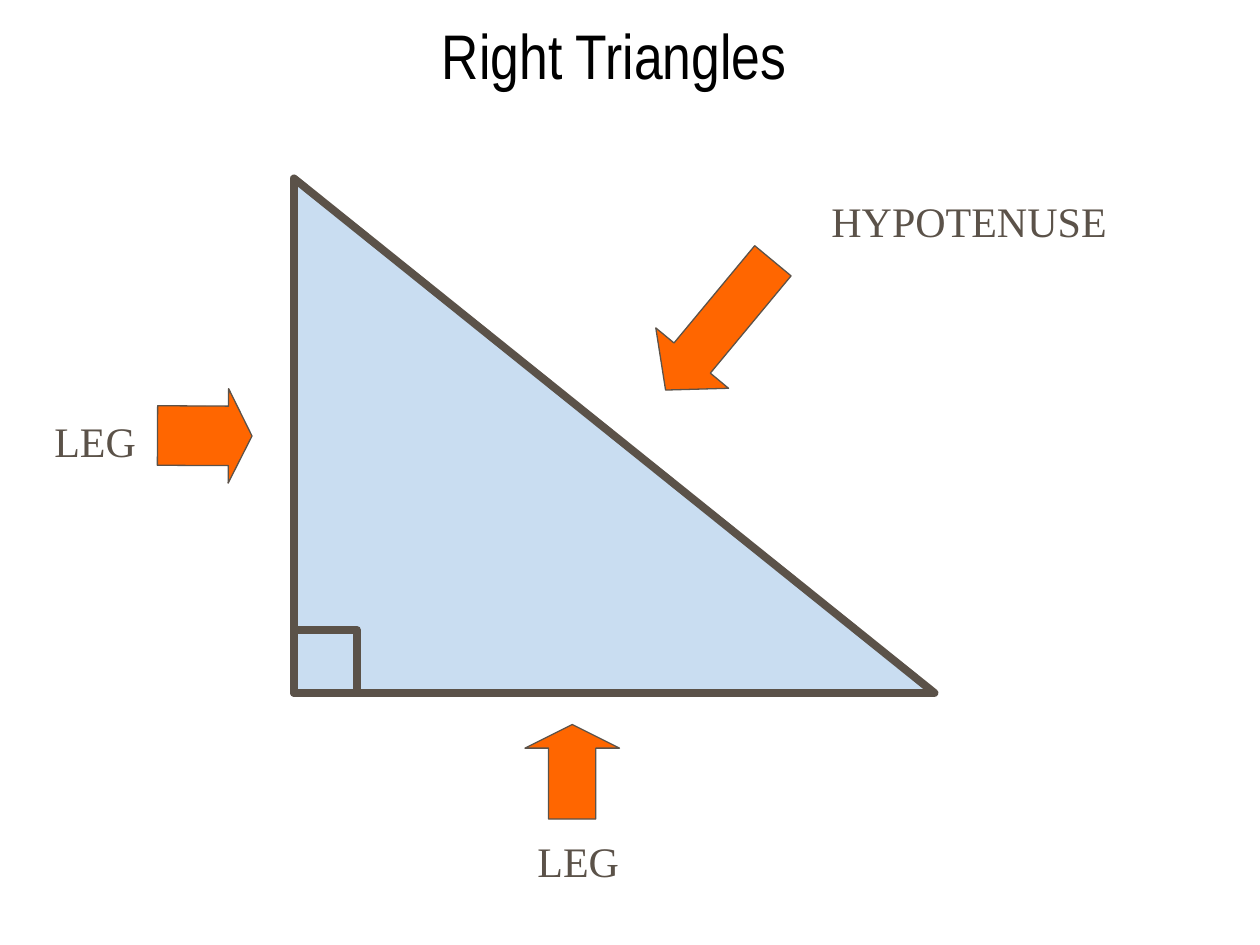
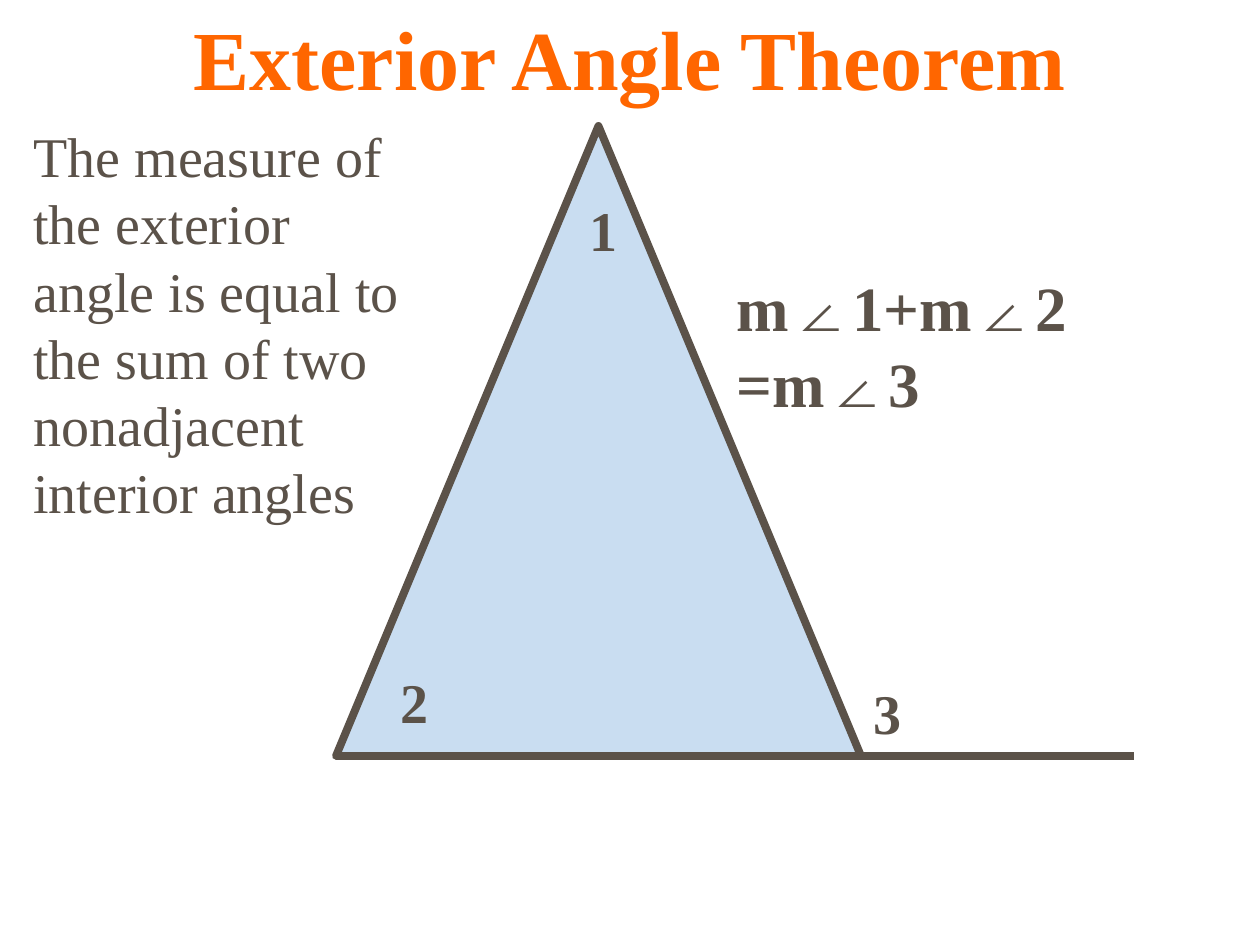
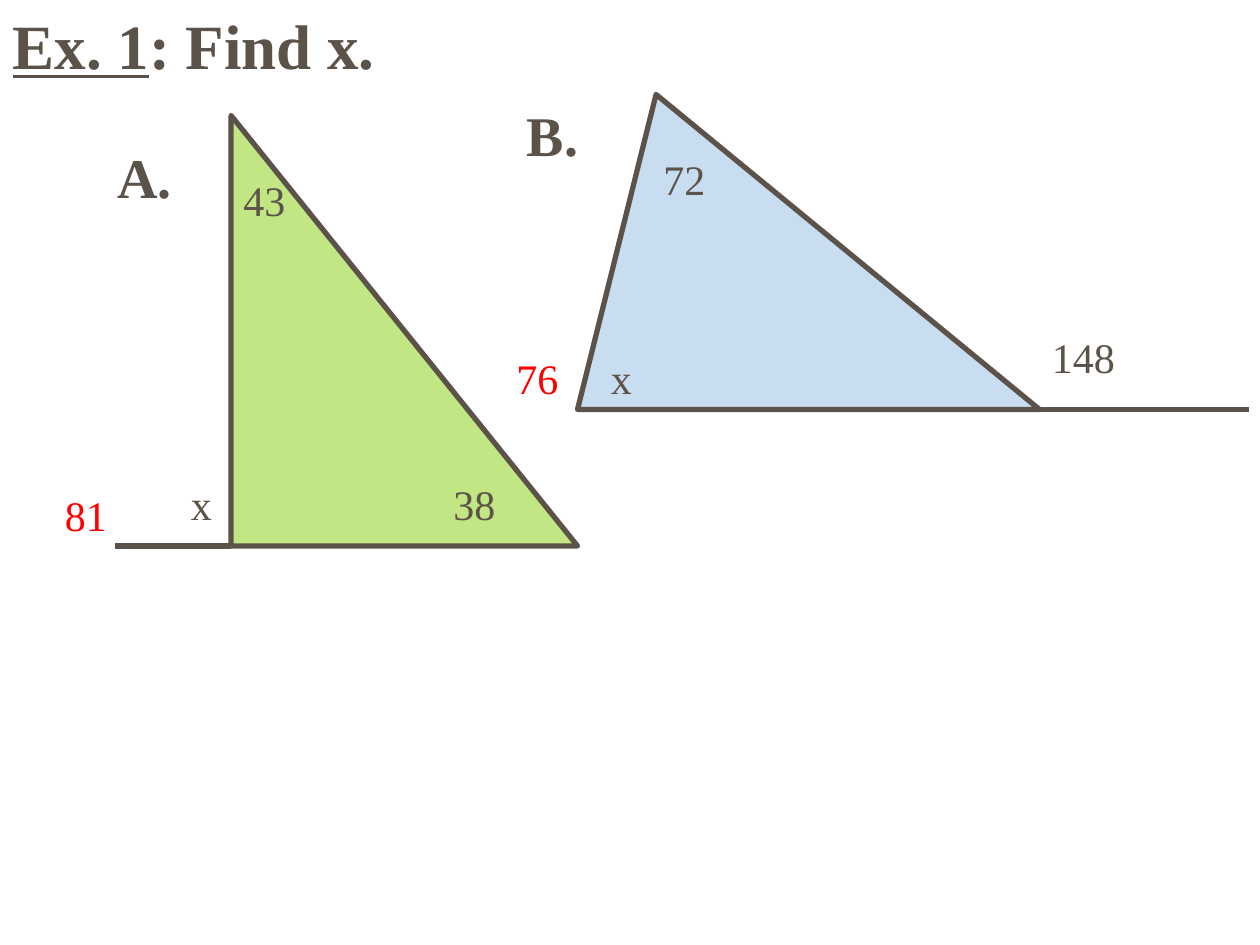
from pptx import Presentation
from pptx import util as u
from pptx.dml.color import RGBColor
from pptx.enum import shapes, text
from pptx.oxml.ns import qn
from lxml import etree

PX = 9525  # EMU in one px, 96 px to the inch
BROWN, ORANGE, RED, BLACK = "5B5249", "FF6600", "FF0000", "000000"
BLUE, GREEN = "C9DDF1", "C3E684"
SERIF, NARROW = "Times New Roman", "Arial Narrow"
KIND = shapes.MSO_SHAPE
LABEL = dict(size=24, bold=False)
MARK = dict(size=32, bold=True)
HEADING = dict(size=36, bold=True)


def px(*lengths):
    return [u.Emu(length * PX) for length in lengths]


def paint(fmt, colour):
    """Give a fill or font colour from a hex string."""
    fmt.rgb = RGBColor.from_string(colour)


def outline(line, width):
    paint(line.color, BROWN)
    line.width = u.Pt(width)


def write(frame, runs, size, colour=BROWN, font=SERIF, align="LEFT", wrap=True, **style):
    """Fill a text frame with one paragraph; each run is (words, extra style)."""
    frame.word_wrap = wrap
    frame.auto_size = text.MSO_AUTO_SIZE.NONE
    frame.vertical_anchor = text.MSO_ANCHOR.TOP
    paragraph = frame.paragraphs[0]
    paragraph.alignment = text.PP_ALIGN[align]
    for words, extra in runs:
        run = paragraph.add_run()
        run.text = words
        look = dict(name=font, size=u.Pt(size), **style) | extra
        for key, value in look.items():
            setattr(run.font, key, value)
        paint(run.font.color, colour)


def title_slide(deck, box, runs, **style):
    slide = deck.slides.add_slide(deck.slide_layouts[5])
    title = slide.shapes.title
    title.left, title.top, title.width, title.height = px(*box)
    write(title.text_frame, runs, **style)
    return slide


def label(slide, box, words, **style):
    frame = slide.shapes.add_textbox(*px(*box)).text_frame
    write(frame, [(words, {})], **style)


def figure(slide, kind, box, fill, width, adjust=(), turn=0):
    outlined = slide.shapes.add_shape(kind, *px(*box))
    outlined.shadow.inherit = False
    outlined.fill.solid()
    paint(outlined.fill.fore_color, fill)
    outline(outlined.line, width)
    outlined.rotation = turn
    for index, value in enumerate(adjust):
        outlined.adjustments[index] = value


def extension(slide, start, length, width):
    """Draw the side of a triangle onwards from one corner."""
    x, y = start
    side = slide.shapes.add_connector(shapes.MSO_CONNECTOR.STRAIGHT, *px(x, y, x + length, y))
    outline(side.line, width)
    etree.SubElement(side.line._get_or_add_ln().getparent(), qn("a:effectLst"))


def right_triangles(deck):
    slide = title_slide(deck, (152, 8, 632, 80), [("Right Triangles", {})],
                        size=36, colour=BLACK, font=NARROW, align="CENTER", wrap=False)
    # Triangle with the right angle marked in its corner
    left, top, width, height = triangle = (224, 136, 488, 392)
    corner = 48
    figure(slide, KIND.RIGHT_TRIANGLE, triangle, BLUE, 4.5)
    figure(slide, KIND.RECTANGLE, (left, top + height - corner, corner, corner), BLUE, 4.5)
    # Arrows pointing at the sides
    for kind, box, adjust, turn in (
        (KIND.UP_ARROW, (left + 176, top + 416, 72, 72), (0.5, 0.25), 0),
        (KIND.UP_ARROW, (left - 104, top + 160, 72, 72), (0.63, 0.25), 90.3),
        (KIND.DOWN_ARROW, (left + 288, top + 48, 72, 128), (0.5, 0.44), 39.7),
    ):
        figure(slide, kind, box, ORANGE, 0.75, adjust, turn)
    # Names of the sides
    for words, x, y, wide in (("LEG", 176, 496, 208), ("LEG", -192, 176, 104),
                              ("HYPOTENUSE", 400, 8, 232)):
        label(slide, (left + x, top + y, wide, 48), words, **LABEL)


def exterior_angle(deck):
    slide = title_slide(deck, (0, 0, 960, 86), [("Exterior Angle Theorem", {})],
                        size=48, colour=ORANGE, bold=True, align="CENTER")
    # Triangle with its base carried on
    left, top, width, height = triangle = (256, 96, 400, 480)
    figure(slide, KIND.ISOSCELES_TRIANGLE, triangle, BLUE, 4.5)
    extension(slide, (left + width, top + height), 208, 4.5)
    # Angle numbers
    for number, x, y, wide in (("1", 184, 48, 32), ("2", 40, 408, 40), ("3", 400, 416, 64)):
        label(slide, (left + x, top + y, wide, 60), number, **MARK)
    # Theorem in words and as a formula
    label(slide, (16, 88, 312, 317),
          "The measure of the exterior angle is equal to the sum of two "
          "nonadjacent interior angles", size=32)
    label(slide, (552, 200, 408, 67), "m∠1+m∠2 =m∠3", **HEADING)


def exercise(slide, triangle, fill, apex, base, name, angles):
    """Draw one triangle, its carried-on base and its labels around it."""
    left, top, width, height = triangle
    figure(slide, KIND.ISOSCELES_TRIANGLE, triangle, fill, 3, (apex,))
    start, length = base
    extension(slide, (left + start, top + height), length, 3)
    words, x, y = name
    label(slide, (left + x, top + y, 64, 60), words, **MARK)
    for value, x, y, wide, colour in angles:
        label(slide, (left + x, top + y, wide, 48), value, colour=colour, **LABEL)


def find_x(deck):
    slide = title_slide(deck, (0, 0, 552, 67),
                        [("Ex. 1", dict(underline=True)), (": Find x.", {})], **HEADING)
    exercise(slide, (176, 88, 264, 328), GREEN, 0, (0, -88), ("A.", -96, 16),
             (("x", -40, 272, 40, BROWN), ("43", 0, 40, 56, BROWN),
              ("38", 160, 272, 56, BROWN), ("81", -136, 280, 96, RED)))
    exercise(slide, (440, 72, 352, 240), BLUE, 0.17, (352, 160), ("B.", -48, 0),
             (("148", 352, 176, 112, BROWN), ("72", 56, 40, 56, BROWN),
              ("x", 16, 192, 40, BROWN), ("76", -56, 192, 56, RED)))


def main():
    deck = Presentation()
    deck.slide_width, deck.slide_height = px(960, 720)
    for build in (right_triangles, exterior_angle, find_x):
        build(deck)
    deck.save("out.pptx")


if __name__ == "__main__":
    main()
